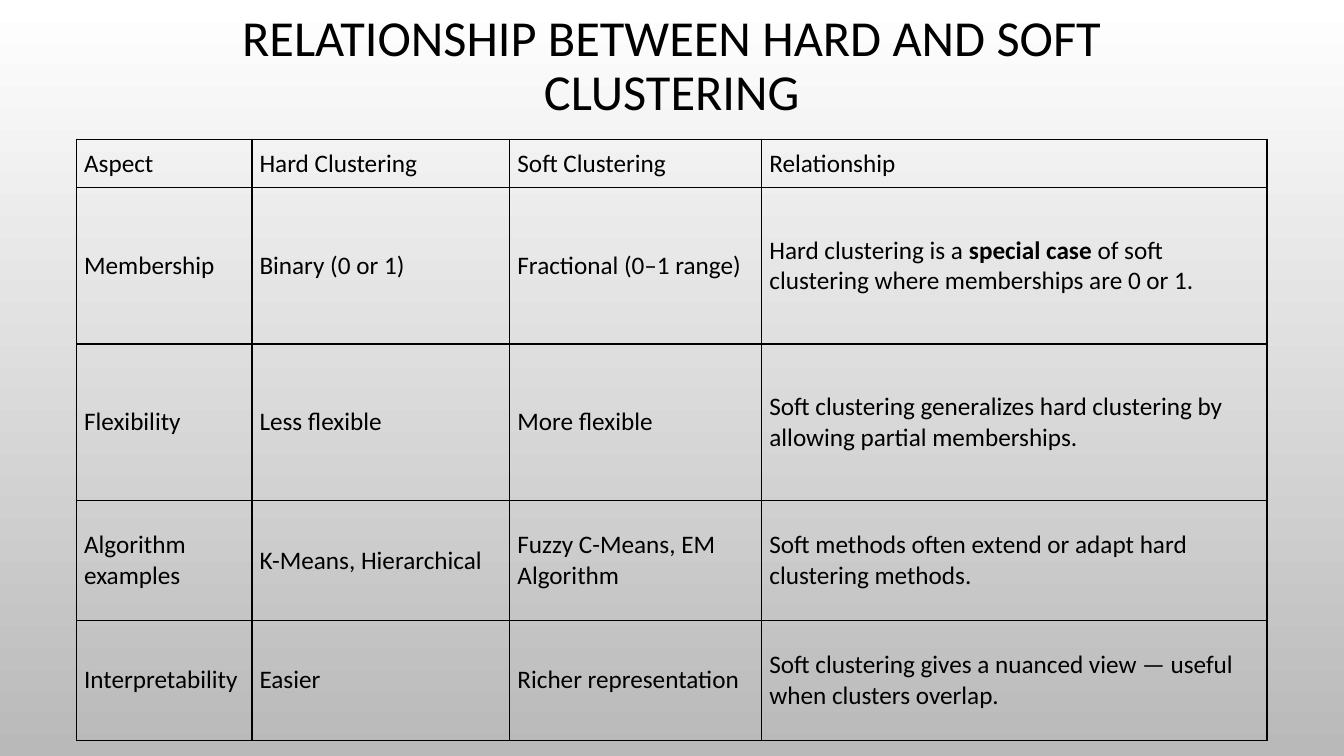
from pptx import Presentation
from pptx import util as u
from pptx.dml.color import RGBColor
from pptx.enum import text
from pptx.oxml import parse_xml
from pptx.oxml.ns import nsdecls

BLACK = RGBColor(0x00, 0x00, 0x00)
WHITE = RGBColor(0xFF, 0xFF, 0xFF)
GREY = RGBColor(0xB9, 0xB9, 0xB9)

TITLE = "RELATIONSHIP BETWEEN HARD AND SOFT CLUSTERING"
COLUMN_WIDTHS = [4.42, 6.5, 6.35, 12.73]
ROW_HEIGHTS = [1.22, 3.94, 3.94, 3.02, 3.02]

# Each cell is a string, or a list of (string, bold) runs
ROWS = [
    ["Aspect", "Hard Clustering", "Soft Clustering", "Relationship"],
    ["Membership", "Binary (0 or 1)", "Fractional (0–1 range)",
     [("Hard clustering is a ", False), ("special case", True),
      (" of soft clustering where memberships are 0 or 1.", False)]],
    ["Flexibility", "Less flexible", "More flexible",
     "Soft clustering generalizes hard clustering by allowing partial memberships."],
    ["Algorithm examples", "K-Means, Hierarchical", "Fuzzy C-Means, EM Algorithm",
     "Soft methods often extend or adapt hard clustering methods."],
    ["Interpretability", "Easier", "Richer representation",
     "Soft clustering gives a nuanced view — useful when clusters overlap."],
]


class SlideBuilder:
    font = "Calibri"
    title_size = 36
    body_size = 18
    border_width = 1

    def __init__(self, prs):
        self.s = prs.slides.add_slide(prs.slide_layouts[5])

    def background(self, top, bottom):
        fill = self.s.background.fill
        fill.gradient()
        fill.gradient_angle = 270
        for stop, color, position in zip(fill.gradient_stops, (top, bottom), (0, 1)):
            stop.color.rgb = color
            stop.position = position

    def run(self, p, content, size, bold=False):
        r = p.add_run()
        r.text = content
        r.font.name = self.font
        r.font.size = u.Pt(size)
        r.font.bold = bold
        r.font.color.rgb = BLACK

    def title(self, content, left, top, width, height):
        sp = self.s.shapes.title
        sp.left, sp.top = u.Cm(left), u.Cm(top)
        sp.width, sp.height = u.Cm(width), u.Cm(height)
        tf = sp.text_frame
        tf.word_wrap = True
        tf.auto_size = text.MSO_AUTO_SIZE.NONE
        tf.vertical_anchor = text.MSO_ANCHOR.MIDDLE
        p = tf.paragraphs[0]
        p.alignment = text.PP_ALIGN.CENTER
        p.line_spacing = 0.9
        self.run(p, content, self.title_size)

    def borders(self, cell):
        tc_pr = cell._tc.get_or_add_tcPr()
        for i, side in enumerate("LRTB"):
            tc_pr.insert(i, parse_xml(
                f'<a:ln{side} {nsdecls("a")} w="{u.Pt(self.border_width)}">'
                f'<a:solidFill><a:srgbClr val="{BLACK}"/></a:solidFill></a:ln{side}>'))

    def cell(self, cell, content):
        cell.fill.background()
        self.borders(cell)
        cell.vertical_anchor = text.MSO_ANCHOR.MIDDLE
        cell.margin_left = cell.margin_right = u.Cm(0.19)
        cell.margin_top = cell.margin_bottom = u.Cm(0.1)
        runs = [(content, False)] if isinstance(content, str) else content
        for words, bold in runs:
            self.run(cell.text_frame.paragraphs[0], words, self.body_size, bold)

    def table(self, rows, left, top, widths, heights):
        frame = self.s.shapes.add_table(
            len(heights), len(widths), u.Cm(left), u.Cm(top),
            u.Cm(sum(widths)), u.Cm(sum(heights)))
        table = frame.table
        table.first_row = table.horz_banding = False
        for column, width in zip(table.columns, widths):
            column.width = u.Cm(width)
        for row, height, contents in zip(table.rows, heights, rows):
            row.height = u.Cm(height)
            for cell, content in zip(row.cells, contents):
                self.cell(cell, content)


def main():
    prs = Presentation()
    prs.slide_width, prs.slide_height = u.Cm(33.87), u.Cm(19.05)
    slide = SlideBuilder(prs)

    # Background and title
    slide.background(WHITE, GREY)
    slide.title(TITLE, 2.54, -0.53, 28.78, 4.45)

    # Comparison table
    slide.table(ROWS, 1.93, 3.51, COLUMN_WIDTHS, ROW_HEIGHTS)

    prs.save("out.pptx")


if __name__ == "__main__":
    main()
